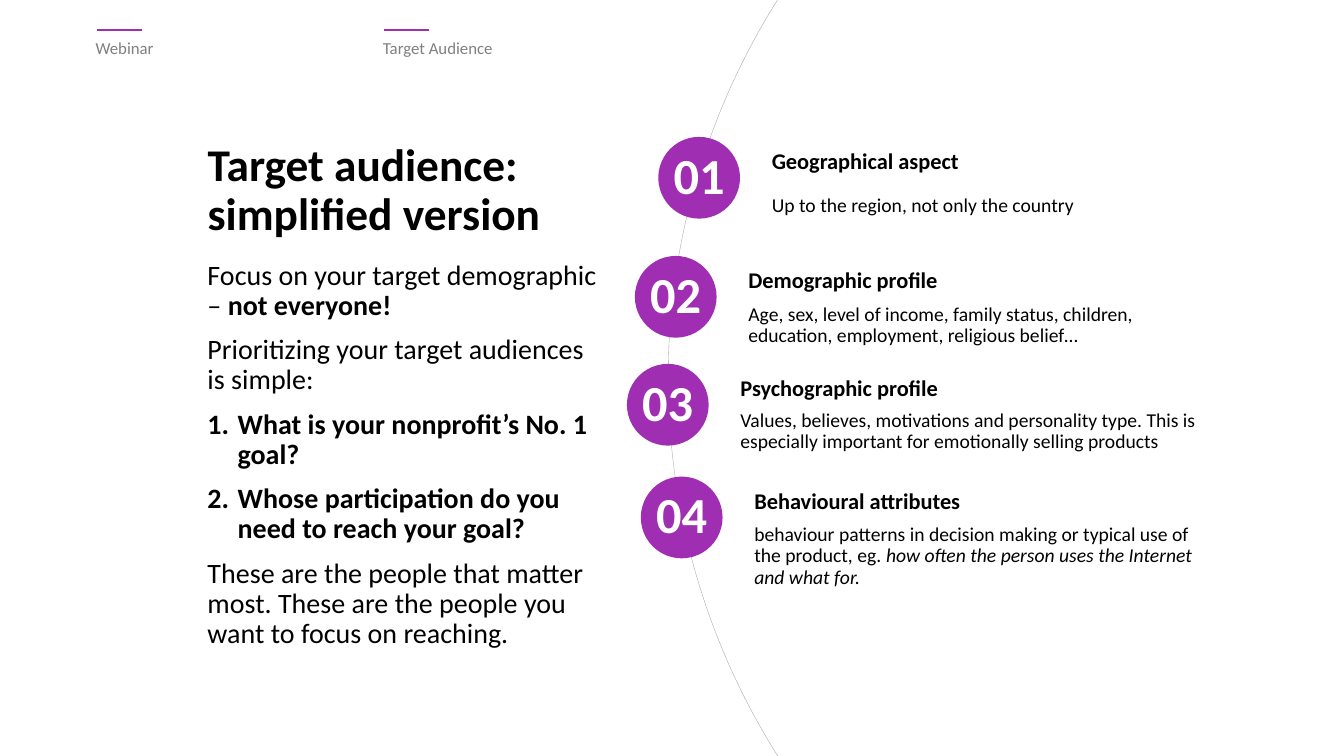
import pptx
import pptx.util
import pptx.dml.color
import pptx.enum.shapes
import pptx.enum.text
import pptx.oxml.ns
import lxml.etree

Cm, Pt = pptx.util.Cm, pptx.util.Pt
ALIGN = pptx.enum.text.PP_ALIGN
ANCHOR = pptx.enum.text.MSO_ANCHOR
SHAPE = pptx.enum.shapes.MSO_SHAPE
qn = pptx.oxml.ns.qn
COLORS = {"text": "000000", "head": "808080", "arc": "A6A6A6",
          "accent": "9F2EB2", "white": "FFFFFF"}


def paint(name):
    return pptx.dml.color.RGBColor.from_string(COLORS[name])


def write(shape, paras, size, color="text", align=ALIGN.LEFT, anchor=ANCHOR.TOP):
    """Fill shape with paragraphs, each (runs, numbered); a run is (text, style)."""
    frame = shape.text_frame
    frame.word_wrap = True
    frame.auto_size = pptx.enum.text.MSO_AUTO_SIZE.NONE
    frame.vertical_anchor = anchor
    for i, (runs, numbered) in enumerate(paras):
        para = frame.add_paragraph() if i else frame.paragraphs[0]
        para.alignment = align
        para.line_spacing = 0.9
        if i:
            para.space_before = Pt(10)
        if numbered:
            props = para._p.get_or_add_pPr()
            props.set("marL", str(Cm(0.76)))
            props.set("indent", str(Cm(-0.76)))
            lxml.etree.SubElement(props, qn("a:buFont"), typeface="+mj-lt")
            lxml.etree.SubElement(props, qn("a:buAutoNum"), type="arabicPeriod")
        for text, style in runs:
            run = para.add_run()
            run.text = text
            font = run.font
            font.name = "Calibri"
            font.size = Pt(size)
            font.color.rgb = paint(color)
            font.bold = style == "bold"
            font.italic = style == "italic"


deck = pptx.Presentation()
deck.slide_width, deck.slide_height = Cm(33.87), Cm(19.05)
slide = deck.slides.add_slide(deck.slide_layouts[5])
shapes = slide.shapes

# Large arc behind the numbered items
arc = shapes.add_shape(SHAPE.OVAL, Cm(16.84), Cm(-8.31), Cm(35.66), Cm(35.66))
arc.shadow.inherit = False
arc.fill.background()
arc.line.color.rgb = paint("arc")
arc.line.width = Pt(0.25)

# Header labels with a short rule above
for text, left in (("Webinar", 2.16), ("Target Audience", 9.4)):
    rule = shapes.add_connector(pptx.enum.shapes.MSO_CONNECTOR.STRAIGHT,
                                Cm(left + 0.28), Cm(0.76), Cm(left + 1.41), Cm(0.76))
    rule.line.color.rgb = paint("accent")
    rule.line.width = Pt(1.25)
    lxml.etree.SubElement(rule._element.spPr, qn("a:effectLst"))
    label = shapes.add_textbox(Cm(left), Cm(0.89), Cm(6.43), Cm(1.42))
    write(label, [([(text, "")], False)], 12, "head", ALIGN.JUSTIFY)

# Title and main text
title = shapes.title
title.left, title.top, title.width, title.height = Cm(4.98), Cm(3.45), Cm(9.5), Cm(3)
write(title, [([("Target audience: simplified version", "bold")], False)], 32.4)

body = shapes.add_textbox(Cm(4.98), Cm(6.45), Cm(10.54), Cm(9.32))
write(body, [
    ([("Focus on your target demographic – ", ""), ("not everyone!", "bold")], False),
    ([("Prioritizing your target audiences is simple:", "")], False),
    ([("What is your nonprofit’s No. 1 goal?", "bold")], True),
    ([("Whose participation do you need to reach your goal?", "bold")], True),
    ([("These are the people that matter most. These are the people you "
       "want to focus on reaching.", "")], False),
], 20)

# Numbered items: left and top of the disc, drop and width of the detail text
items = [
    (16.59, 3.45, 1.35, 9.75, "Geographical aspect",
     [("Up to the region, not only the country", "")]),
    (16, 6.45, 1.09, 10.34, "Demographic profile",
     [("Age, sex, level of income, family status, children, education, "
       "employment, religious belief…", "")]),
    (15.8, 9.17, 1.04, 12.04, "Psychographic profile",
     [("Values, believes, motivations and personality type. This is "
       "especially important for emotionally selling products", "")]),
    (16.15, 12.01, 1.09, 11.96, "Behavioural attributes",
     [("behaviour patterns in decision making or typical use of the product, eg. ", ""),
      ("how often the person uses the Internet and what for.", "italic")]),
]
for num, (left, top, drop, width, name, detail) in enumerate(items, 1):
    disc = shapes.add_shape(SHAPE.OVAL, Cm(left), Cm(top), Cm(2.06), Cm(2.06))
    disc.shadow.inherit = False
    disc.fill.solid()
    disc.fill.fore_color.rgb = paint("accent")
    disc.line.fill.background()
    frame = disc.text_frame
    frame.margin_left = frame.margin_right = frame.margin_top = frame.margin_bottom = 0
    write(disc, [([(f"{num:02}", "bold")], False)], 36, "white",
          ALIGN.CENTER, ANCHOR.MIDDLE)

    side = Cm(left + 2.61)
    head = shapes.add_textbox(side, Cm(top + 0.22), Cm(6.2), Cm(0.66))
    write(head, [([(name, "bold")], False)], 16)
    note = shapes.add_textbox(side, Cm(top + drop), Cm(width), Cm(0.99))
    write(note, [(detail, False)], 14)

deck.save("out.pptx")
